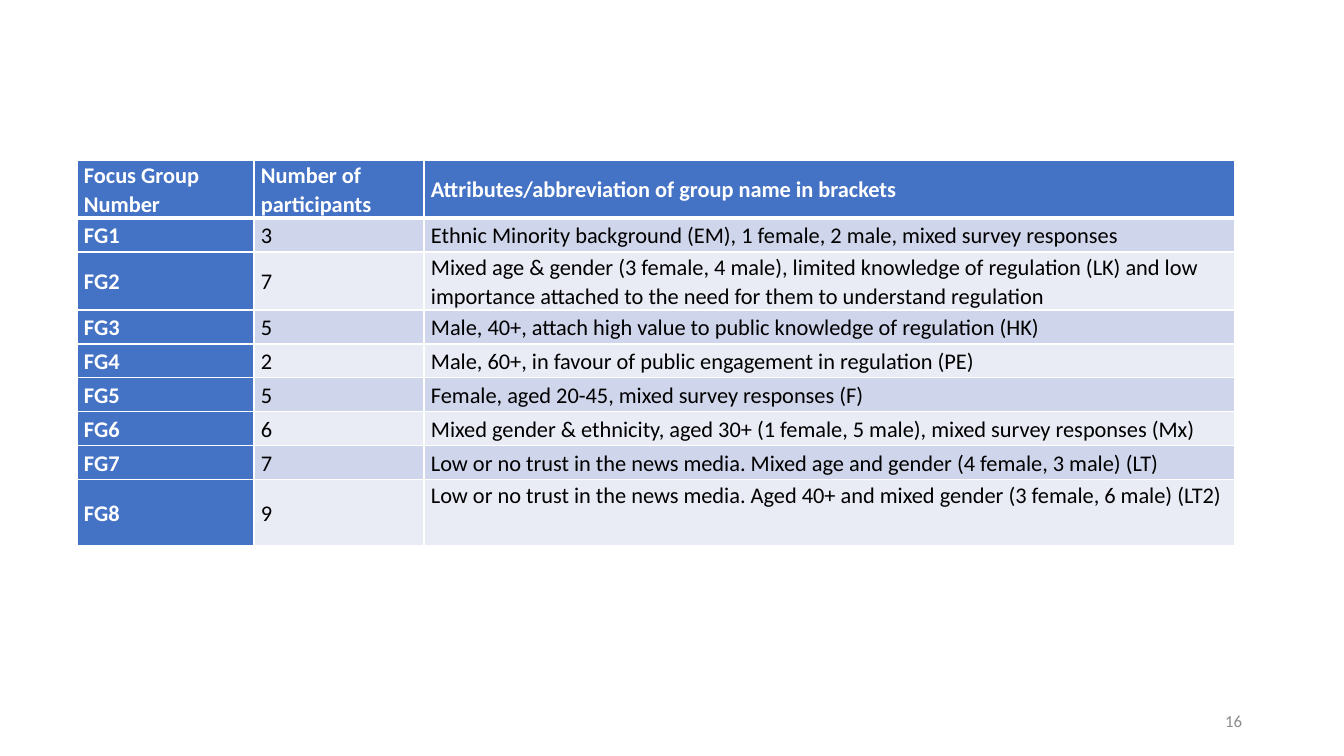
from dataclasses import dataclass

from lxml.etree import SubElement
from pptx import Presentation
from pptx.dml.color import RGBColor
from pptx.enum.text import MSO_ANCHOR, PP_ALIGN
from pptx.oxml.ns import qn
from pptx.util import Pt

HEADERS = ["Focus Group Number", "Number of participants",
           "Attributes/abbreviation of group name in brackets"]
GROUPS = [
    (3, "Ethnic Minority background (EM), 1 female, 2 male, mixed survey responses"),
    (7, "Mixed age & gender (3 female, 4 male), limited knowledge of regulation (LK) "
        "and low importance attached to the need for them to understand regulation"),
    (5, "Male, 40+, attach high value to public knowledge of regulation (HK)"),
    (2, "Male, 60+, in favour of public engagement in regulation (PE)"),
    (5, "Female, aged 20-45, mixed survey responses (F)"),
    (6, "Mixed gender & ethnicity, aged 30+ (1 female, 5 male), mixed survey responses (Mx)"),
    (7, "Low or no trust in the news media. Mixed age and gender (4 female, 3 male) (LT)"),
    (9, "Low or no trust in the news media. Aged 40+ and mixed gender (3 female, 6 male) (LT2)"),
]
PAGE_NUMBER = "16"

SLIDE_SIZE = (1344, 756)
TABLE_LEFT, TABLE_TOP = 77, 160
COLUMN_WIDTHS = [177, 170, 811]
ROW_HEIGHTS = [58, 34, 58, 34, 34, 34, 34, 34, 66]
PAGE_NUMBER_BOX = (950, 701, 302, 40)
CELL_INSET = 7


@dataclass(frozen=True)
class Theme:
    font: str = "Calibri"
    table_size: int = 16
    page_size: int = 12
    heading: str = "4472C4"
    bands: tuple = ("CFD5EA", "E9EBF5")
    white: str = "FFFFFF"
    black: str = "000000"
    grey: str = "8C8C8C"
    line: int = 1
    header_line: int = 3


THEME = Theme()


def px(length):
    return round(length * 914400 / 100.8)


def set_all(target, values):
    for name, value in values.items():
        setattr(target, name, value)


def write(paragraph, text, size, color, bold=False):
    run = paragraph.add_run()
    run.text = text
    set_all(run.font, {"name": THEME.font, "size": Pt(size), "bold": bold})
    run.font.color.rgb = RGBColor.from_string(color)


def add_borders(cell, bottom_width):
    """Draw white cell edges; call before filling, as edges precede the fill in XML."""
    properties = cell._tc.get_or_add_tcPr()
    for side in "LRTB":
        width = bottom_width if side == "B" else THEME.line
        line = SubElement(properties, qn(f"a:ln{side}"), w=str(Pt(width)))
        fill = SubElement(line, qn("a:solidFill"))
        SubElement(fill, qn("a:srgbClr"), val=THEME.white)


def format_cell(cell, text, fill, is_heading, bottom_width, anchor):
    set_all(cell, {"margin_left": px(CELL_INSET), "margin_right": px(CELL_INSET),
                   "margin_top": 0, "margin_bottom": 0, "vertical_anchor": anchor})
    add_borders(cell, bottom_width)
    cell.fill.solid()
    cell.fill.fore_color.rgb = RGBColor.from_string(fill)
    paragraph = cell.text_frame.paragraphs[0]
    set_all(paragraph, {"line_spacing": 1.07, "space_after": Pt(4)})
    write(paragraph, text, THEME.table_size,
          THEME.white if is_heading else THEME.black, is_heading)


def add_group_table(slide):
    rows = [HEADERS] + [(f"FG{number}", str(count), attributes)
                        for number, (count, attributes) in enumerate(GROUPS, 1)]
    table = slide.shapes.add_table(
        len(rows), len(HEADERS), px(TABLE_LEFT), px(TABLE_TOP),
        px(sum(COLUMN_WIDTHS)), px(sum(ROW_HEIGHTS))).table
    table.first_col = True
    for column, width in zip(table.columns, COLUMN_WIDTHS):
        column.width = px(width)
    for row, height in zip(table.rows, ROW_HEIGHTS):
        row.height = px(height)
    last_cell = (len(rows) - 1, len(HEADERS) - 1)
    for r, texts in enumerate(rows):
        for c, text in enumerate(texts):
            is_heading = r == 0 or c == 0
            format_cell(
                table.cell(r, c), text,
                THEME.heading if is_heading else THEME.bands[(r - 1) % 2],
                is_heading,
                THEME.header_line if r == 0 else THEME.line,
                MSO_ANCHOR.TOP if (r, c) == last_cell else MSO_ANCHOR.MIDDLE)


def add_page_number(slide):
    frame = slide.shapes.add_textbox(*map(px, PAGE_NUMBER_BOX)).text_frame
    set_all(frame, {"word_wrap": True, "vertical_anchor": MSO_ANCHOR.MIDDLE})
    paragraph = frame.paragraphs[0]
    paragraph.alignment = PP_ALIGN.RIGHT
    write(paragraph, PAGE_NUMBER, THEME.page_size, THEME.grey)


def main():
    presentation = Presentation()
    width, height = map(px, SLIDE_SIZE)
    set_all(presentation, {"slide_width": width, "slide_height": height})
    slide = presentation.slides.add_slide(presentation.slide_layouts[6])
    add_page_number(slide)
    add_group_table(slide)
    presentation.save("out.pptx")


if __name__ == "__main__":
    main()
